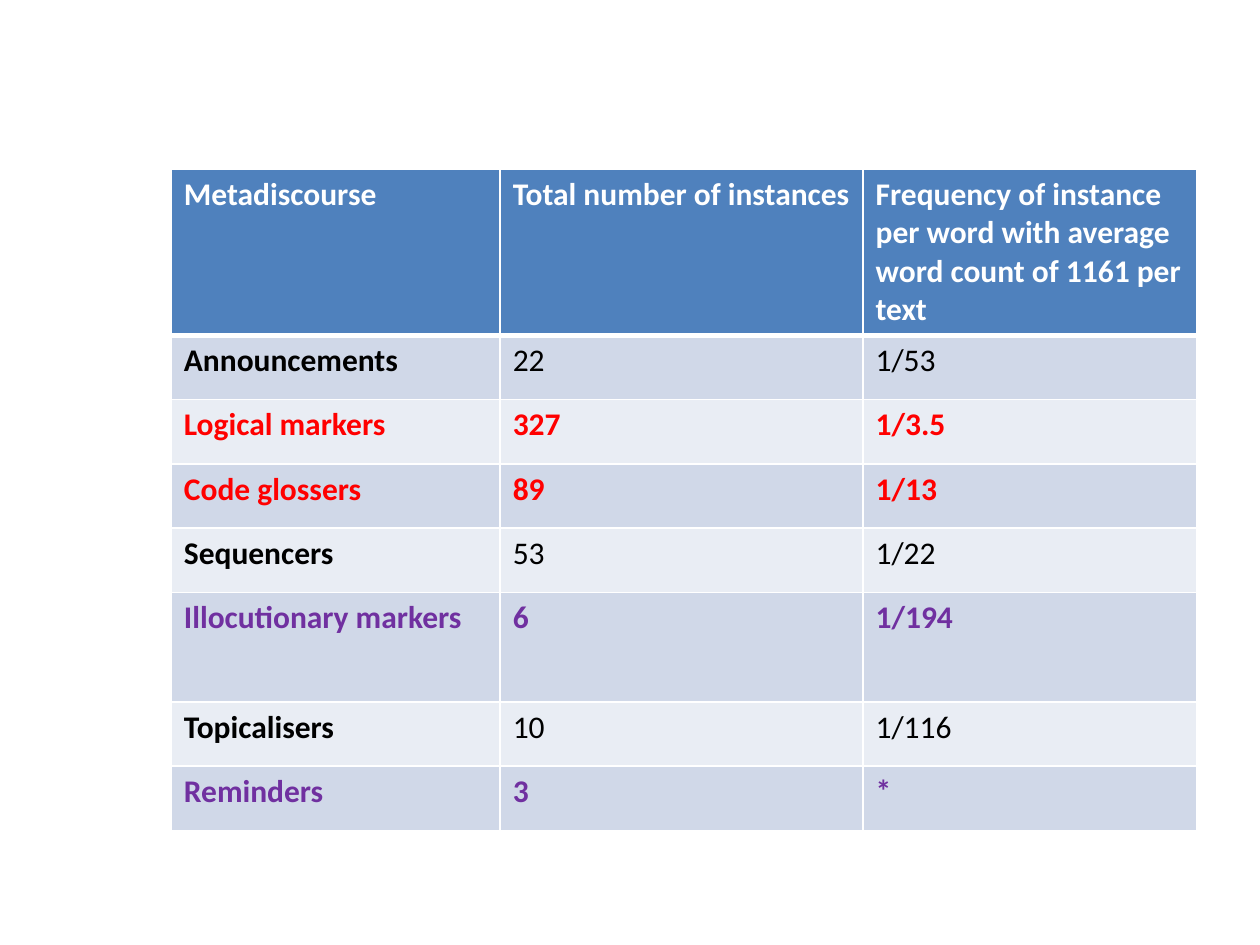
from lxml import etree
from pptx import Presentation
from pptx.dml.color import RGBColor
from pptx.oxml.ns import qn
from pptx.util import Inches, Pt

BLANK_LAYOUT = 6
COLORS = {
    "header": "4F81BD",
    "band_dark": "D0D8E8",
    "band_light": "E9EDF4",
    "white": "FFFFFF",
    "plain": "000000",
    "frequent": "FF0000",
    "rare": "7030A0",
}

HEADINGS = (
    "Metadiscourse",
    "Total number of instances",
    "Frequency of instance per word with average word count of 1161 per text",
)
# Category, instances, frequency, emphasis
MARKERS = [
    ("Announcements", "22", "1/53", "plain"),
    ("Logical markers", "327", "1/3.5", "frequent"),
    ("Code glossers", "89", "1/13", "frequent"),
    ("Sequencers", "53", "1/22", "plain"),
    ("Illocutionary markers", "6", "1/194", "rare"),
    ("Topicalisers", "10", "1/116", "plain"),
    ("Reminders", "3", "*", "rare"),
]
COL_WIDTHS = [2.61, 2.88, 2.65]
ROW_HEIGHTS = [1.3] + [0.87 if m[0] == "Illocutionary markers" else 0.51
                       for m in MARKERS]


class SlideBuilder:
    """Holds the style and the current slide."""

    font = "Calibri"
    size = Pt(18)

    def __init__(self, slide):
        self.slide = slide

    def table(self, left, top, col_widths, row_heights):
        frame = self.slide.shapes.add_table(
            len(row_heights), len(col_widths), Inches(left), Inches(top),
            Inches(sum(col_widths)), Inches(sum(row_heights)))
        table = frame.table
        for column, width in zip(table.columns, col_widths):
            column.width = Inches(width)
        for row, height in zip(table.rows, row_heights):
            row.height = Inches(height)
        return table

    def borders(self, cell, top=1, bottom=1):
        tc_pr = cell._tc.get_or_add_tcPr()
        for side, width in (("L", 1), ("R", 1), ("T", top), ("B", bottom)):
            ln = etree.SubElement(tc_pr, qn(f"a:ln{side}"), w=str(Pt(width)))
            fill = etree.SubElement(ln, qn("a:solidFill"))
            etree.SubElement(fill, qn("a:srgbClr"), val=COLORS["white"])

    def cell(self, cell, text, fill, color, bold, top=1, bottom=1):
        self.borders(cell, top, bottom)
        cell.fill.solid()
        cell.fill.fore_color.rgb = RGBColor.from_string(COLORS[fill])
        r = cell.text_frame.paragraphs[0].add_run()
        r.text = text
        r.font.name = self.font
        r.font.size = self.size
        r.font.bold = bold
        r.font.color.rgb = RGBColor.from_string(COLORS[color])


def main():
    prs = Presentation()
    prs.slide_width, prs.slide_height = Inches(10), Inches(7.5)
    s = SlideBuilder(prs.slides.add_slide(prs.slide_layouts[BLANK_LAYOUT]))
    table = s.table(1.36, 1.34, COL_WIDTHS, ROW_HEIGHTS)

    # Header row, with a thick rule below
    for col, heading in enumerate(HEADINGS):
        s.cell(table.cell(0, col), heading, "header", "white", True, bottom=3)

    # Marker rows: banded, first column and emphasised rows bold
    for row, (*values, emphasis) in enumerate(MARKERS, start=1):
        band = "band_dark" if row % 2 else "band_light"
        for col, value in enumerate(values):
            bold = col == 0 or emphasis != "plain"
            s.cell(table.cell(row, col), value, band, emphasis, bold,
                   top=3 if row == 1 else 1)

    prs.save("out.pptx")


if __name__ == "__main__":
    main()
